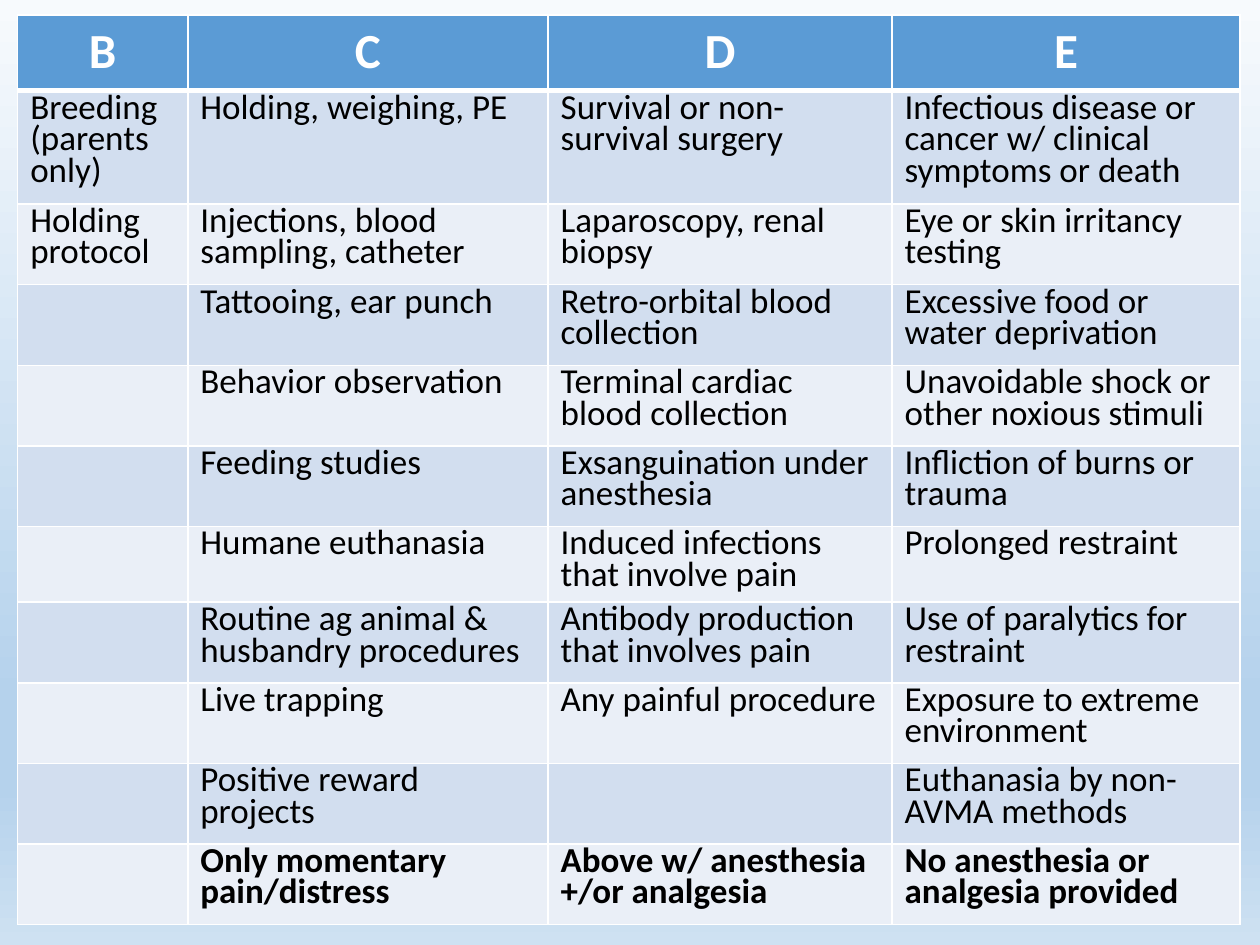
import copy
import dataclasses

import lxml.etree
import pptx
import pptx.dml.color
import pptx.enum.text
import pptx.oxml.ns
import pptx.util

Inches = pptx.util.Inches
Pt = pptx.util.Pt
qn = pptx.oxml.ns.qn


@dataclasses.dataclass
class Theme:
    font: str = "Calibri"
    head: str = "5B9BD5"
    bands: tuple = ("D2DEEF", "EAEFF7")
    light: str = "FFFFFF"
    dark: str = "000000"
    sky: tuple = ((0, "F7FAFD"), (0.74, "B5D2EC"), (0.83, "B5D2EC"), (1, "CEE1F2"))
    big: int = 28
    small: int = 20
    pitch: int = 18
    thin: int = 1
    thick: int = 3


WIDTHS = (1.35, 2.86, 2.73, 2.76)
HEIGHTS = (0.6, 0.9, 0.64, 0.64, 0.64, 0.64, 0.6, 0.64, 0.64, 0.64, 0.64)
ROWS = (
    ("B", "C", "D", "E"),
    ("Breeding\n(parents only)", "Holding, weighing, PE", "Survival or non-survival surgery",
     "Infectious disease or cancer w/ clinical symptoms or death"),
    ("Holding protocol", "Injections, blood sampling, catheter", "Laparoscopy, renal biopsy",
     "Eye or skin irritancy testing"),
    ("", "Tattooing, ear punch", "Retro-orbital blood collection",
     "Excessive food or water deprivation"),
    ("", "Behavior observation", "Terminal cardiac blood collection",
     "Unavoidable shock or other noxious stimuli"),
    ("", "Feeding studies", "Exsanguination under anesthesia", "Infliction of burns or trauma"),
    ("", "Humane euthanasia", "Induced infections that involve pain", "Prolonged restraint"),
    ("", "Routine ag animal & husbandry procedures", "Antibody production that involves pain",
     "Use of paralytics for restraint"),
    ("", "Live trapping", "Any painful procedure", "Exposure to extreme environment"),
    ("", "Positive reward projects", "", "Euthanasia by non-AVMA methods"),
    ("", "Only momentary pain/distress", "Above w/ anesthesia +/or analgesia",
     "No anesthesia or analgesia provided"),
)


class Deck:
    def __init__(self, theme):
        self.theme = theme
        self.show = pptx.Presentation()
        self.show.slide_width = Inches(10)
        self.show.slide_height = Inches(7.5)
        self.slide = self.show.slides.add_slide(self.show.slide_layouts[6])

    def color(self, code):
        return pptx.dml.color.RGBColor.from_string(code)

    def backdrop(self):
        fill = self.slide.background.fill
        fill.gradient()
        fill.gradient_angle = 270
        stops = self.slide.background.fill.gradient_stops
        stem = self.slide.element.find(".//" + qn("a:gsLst"))
        for _ in range(len(self.theme.sky) - len(stops)):
            stem.append(copy.deepcopy(stem[-1]))
        for stop, (place, code) in zip(fill.gradient_stops, self.theme.sky):
            stop.position = place
            stop.color.rgb = self.color(code)

    def border(self, cell, side, width):
        props = cell._tc.get_or_add_tcPr()
        line = lxml.etree.SubElement(props, qn("a:ln" + side), w=str(int(Pt(width))))
        solid = lxml.etree.SubElement(line, qn("a:solidFill"))
        lxml.etree.SubElement(solid, qn("a:srgbClr"), val=self.theme.light)

    def cell(self, cell, text, row, last):
        theme = self.theme
        head = row == 0
        for side in "LRTB":
            heavy = (row, side) in ((0, "B"), (1, "T"))
            self.border(cell, side, theme.thick if heavy else theme.thin)
        cell.fill.solid()
        cell.fill.fore_color.rgb = self.color(theme.head if head else theme.bands[(row - 1) % 2])
        if not text:
            return
        cell.text = text
        for para in cell.text_frame.paragraphs:
            if head:
                para.alignment = pptx.enum.text.PP_ALIGN.CENTER
            else:
                para.line_spacing = Pt(theme.pitch)
            for run in para.runs:
                run.font.name = theme.font
                run.font.size = Pt(theme.big if head else theme.small)
                run.font.bold = head or row == last
                run.font.color.rgb = self.color(theme.light if head else theme.dark)

    def table(self, left, top, widths, heights, rows):
        frame = self.slide.shapes.add_table(
            len(rows), len(widths), Inches(left), Inches(top),
            Inches(sum(widths)), Inches(sum(heights)))
        grid = frame.table
        for col, width in zip(grid.columns, widths):
            col.width = Inches(width)
        for row, height in zip(grid.rows, heights):
            row.height = Inches(height)
        for r, texts in enumerate(rows):
            for c, text in enumerate(texts):
                self.cell(grid.cell(r, c), text, r, len(rows) - 1)


def main():
    deck = Deck(Theme())
    deck.backdrop()
    deck.table(0.14, 0.12, WIDTHS, HEIGHTS, ROWS)
    deck.show.save("out.pptx")


if __name__ == "__main__":
    main()
